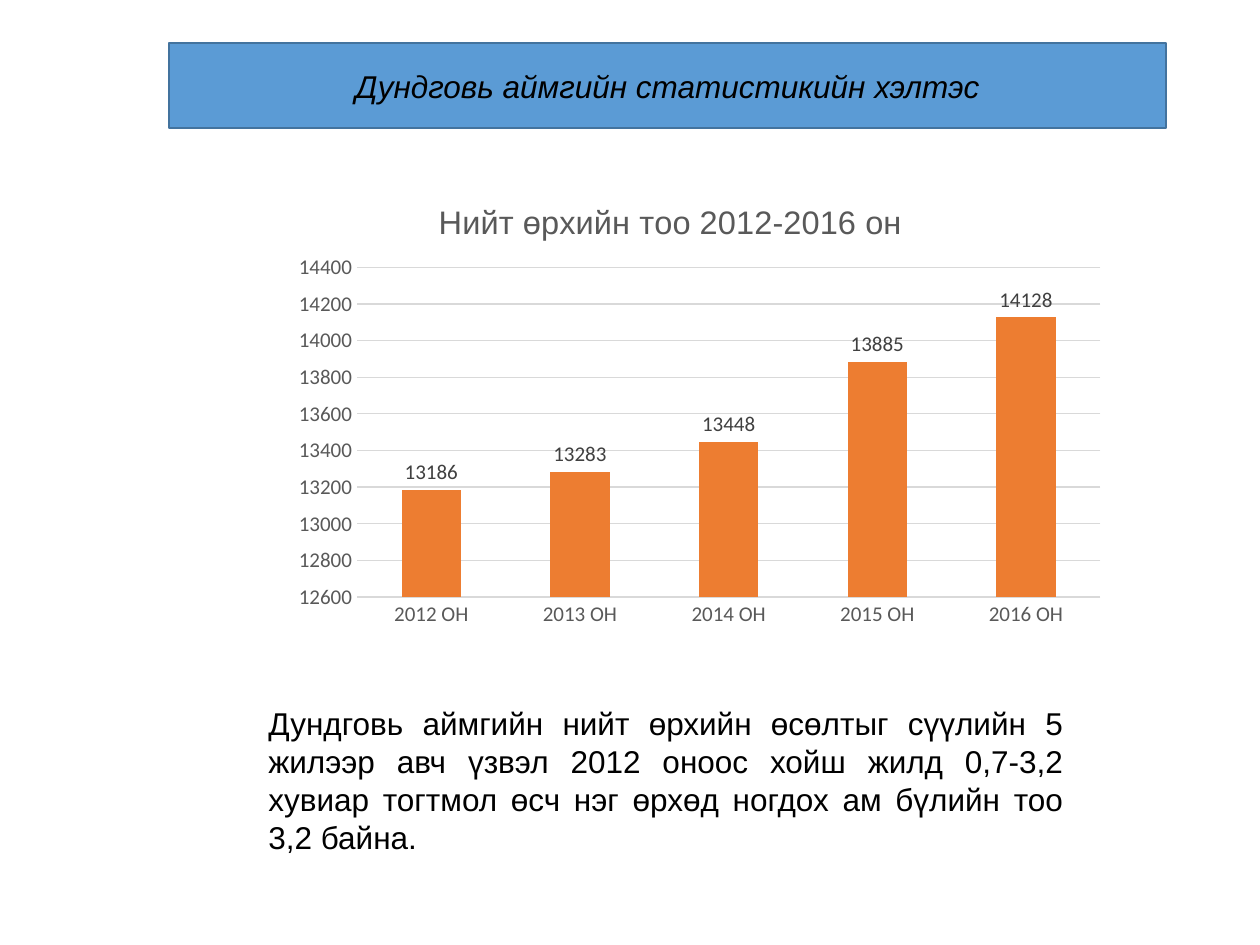
"""Build a slide with a banner title, a household column chart and a comment."""
from lxml.etree import SubElement
from pptx import Presentation
from pptx.chart.data import CategoryChartData
from pptx.dml.color import RGBColor
from pptx.enum.chart import XL_CHART_TYPE, XL_LABEL_POSITION, XL_TICK_MARK
from pptx.enum.text import MSO_ANCHOR, MSO_AUTO_SIZE, PP_ALIGN
from pptx.oxml.ns import qn
from pptx.util import Pt

TITLE = "Дундговь аймгийн статистикийн хэлтэс"
HEAD = "Нийт өрхийн тоо 2012-2016 он"
HOMES = {2012: 13186, 2013: 13283, 2014: 13448, 2015: 13885, 2016: 14128}
NOTE = ("Дундговь аймгийн нийт өрхийн өсөлтыг сүүлийн 5 жилээр авч үзвэл "
        "2012 оноос хойш жилд 0,7-3,2 хувиар тогтмол өсч нэг өрхөд ногдох "
        "ам бүлийн тоо 3,2 байна.")
BOXES = {"title": (169, 43, 997, 85), "chart": (241, 178, 860, 471),
         "note": (256, 698, 820, 165)}
PLOT = {"x": 0.135, "y": 0.19, "w": 0.865, "h": 0.7}


def px(count):
    return round(count * 914400 / 126)


def box(name):
    return [px(side) for side in BOXES[name]]


def color(code):
    return RGBColor.from_string(code)


def style(font, size, code, face="Arial", italic=False):
    font.size, font.name = Pt(size), face
    font.bold, font.italic = False, italic
    font.color.rgb = color(code)


def write(frame, text, align, italic=False):
    frame.word_wrap = True
    para = frame.paragraphs[0]
    para.alignment = align
    para.line_spacing = 1.0
    run = para.add_run()
    run.text = text
    style(run.font, 18, "000000", italic=italic)


def add_title(slide):
    shape = slide.shapes.title
    shape.left, shape.top, shape.width, shape.height = box("title")
    shape.fill.solid()
    shape.fill.fore_color.rgb = color("5B9BD5")
    shape.line.color.rgb = color("43739E")
    shape.line.width = Pt(1)
    frame = shape.text_frame
    frame.auto_size = MSO_AUTO_SIZE.NONE
    frame.vertical_anchor = MSO_ANCHOR.MIDDLE
    write(frame, TITLE, PP_ALIGN.CENTER, italic=True)


def place_plot(chart):
    area = chart.element.find(".//" + qn("c:plotArea"))
    for old in area.findall(qn("c:layout")):
        area.remove(old)
    layout = SubElement(area, qn("c:layout"))
    area.insert(0, layout)
    manual = SubElement(layout, qn("c:manualLayout"))
    rules = {"layoutTarget": "inner", "xMode": "edge", "yMode": "edge", **PLOT}
    for tag, value in rules.items():
        SubElement(manual, qn("c:" + tag)).set("val", str(value))


def add_chart(slide):
    data = CategoryChartData()
    data.categories = [f"{year} ОН" for year in HOMES]
    data.add_series("Series 1", HOMES.values())
    chart = slide.shapes.add_chart(
        XL_CHART_TYPE.COLUMN_CLUSTERED, *box("chart"), data).chart
    style(chart.font, 10, "000000", "Calibri")
    chart.has_legend = False
    chart.has_title = True
    run = chart.chart_title.text_frame.paragraphs[0].add_run()
    run.text = HEAD
    style(run.font, 18.6, "595959")
    chart.chart_title.include_in_layout = False
    place_plot(chart)

    for axis in (chart.category_axis, chart.value_axis):
        axis.major_tick_mark = axis.minor_tick_mark = XL_TICK_MARK.NONE
        axis.format.line.fill.background()
        style(axis.tick_labels.font, 12, "595959", "Calibri")
    scale = chart.value_axis
    scale.minimum_scale, scale.maximum_scale = 12600, 14400
    scale.major_unit = 200
    grid = scale.major_gridlines.format.line
    grid.color.rgb, grid.width = color("D9D9D9"), Pt(0.75)

    plot = chart.plots[0]
    plot.gap_width = 150
    plot.vary_by_categories = False
    bars = plot.series[0]
    bars.format.fill.solid()
    bars.format.fill.fore_color.rgb = color("ED7D31")
    labels = bars.data_labels
    labels.show_value = True
    labels.position = XL_LABEL_POSITION.OUTSIDE_END
    style(labels.font, 12, "404040", "Calibri")


def add_note(slide):
    frame = slide.shapes.add_textbox(*box("note")).text_frame
    frame.auto_size = MSO_AUTO_SIZE.SHAPE_TO_FIT_TEXT
    write(frame, NOTE, PP_ALIGN.JUSTIFY)


def main():
    deck = Presentation()
    deck.slide_width, deck.slide_height = px(1260), px(945)
    slide = deck.slides.add_slide(deck.slide_layouts[5])
    add_title(slide)
    add_chart(slide)
    add_note(slide)
    deck.save("out.pptx")


if __name__ == "__main__":
    main()
